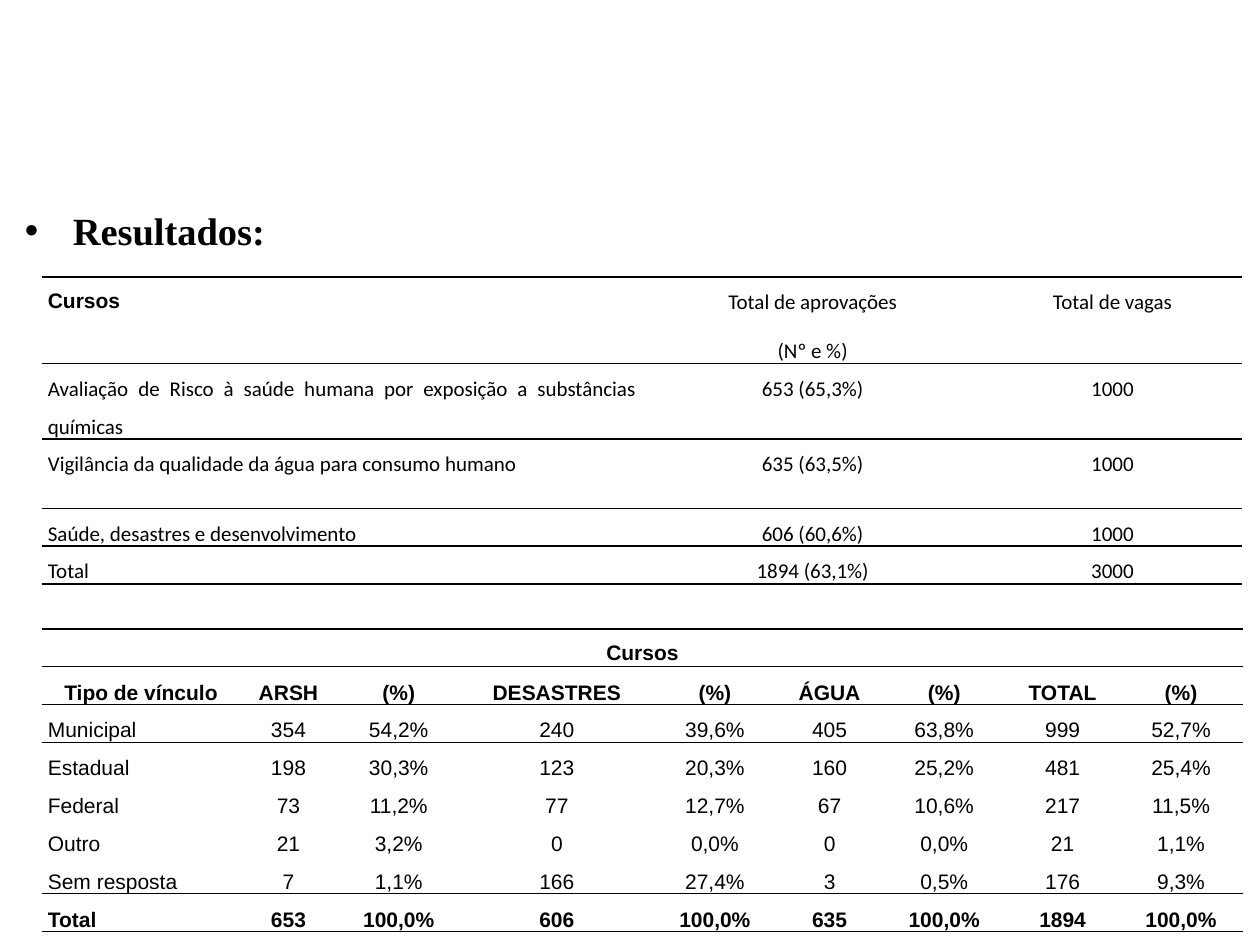
from dataclasses import dataclass

from lxml import etree
from pptx import Presentation
from pptx.dml.color import RGBColor
from pptx.enum.text import MSO_ANCHOR, PP_ALIGN
from pptx.oxml.ns import qn
from pptx.util import Inches, Pt

LEFT, CENTER, JUSTIFY = PP_ALIGN.LEFT, PP_ALIGN.CENTER, PP_ALIGN.JUSTIFY
TOP, MIDDLE, BOTTOM = MSO_ANCHOR.TOP, MSO_ANCHOR.MIDDLE, MSO_ANCHOR.BOTTOM
PLAIN_TABLE_STYLE = "{2D5ABB26-0587-4C30-8999-92F81FD0307C}"


@dataclass(frozen=True)
class Theme:
    ink: str = "000000"
    heading_font: str = "Times New Roman"
    table_font: str = "Arial"
    body_font: str = "Calibri"
    heading_size: int = 22
    table_size: int = 12
    rule_width: int = 1


class SlideBuilder:
    def __init__(self, slide, theme):
        self.slide = slide
        self.theme = theme

    def style(self, paragraph, font_name, size, bold):
        font = paragraph.font
        font.name, font.size, font.bold = font_name, Pt(size), bold
        font.color.rgb = RGBColor.from_string(self.theme.ink)

    def bullet_heading(self, text, left, top, width, height):
        box = self.slide.shapes.add_textbox(
            Inches(left), Inches(top), Inches(width), Inches(height))
        frame = box.text_frame
        frame.word_wrap = True
        frame.vertical_anchor = MIDDLE
        paragraph = frame.paragraphs[0]
        paragraph.text = text
        properties = paragraph._p.get_or_add_pPr()
        properties.set("marL", str(Inches(0.38)))
        properties.set("indent", str(Inches(-0.38)))
        etree.SubElement(properties, qn("a:buFont"), typeface="Arial")
        etree.SubElement(properties, qn("a:buChar"), char="•")
        self.style(paragraph, self.theme.heading_font, self.theme.heading_size, True)

    def table(self, left, top, widths, heights):
        frame = self.slide.shapes.add_table(
            len(heights), len(widths), Inches(left), Inches(top),
            Inches(sum(widths)), Inches(sum(heights)))
        table = frame.table
        table.first_row = table.horz_banding = False
        table._tbl.tblPr.find(qn("a:tableStyleId")).text = PLAIN_TABLE_STYLE
        for column, width in zip(table.columns, widths):
            column.width = Inches(width)
        for row, height in zip(table.rows, heights):
            row.height = Inches(height)
        return table

    def cell(self, cell, text, font_name, bold=False, align=CENTER, anchor=TOP):
        cell.margin_left = cell.margin_right = Inches(0.05)
        cell.margin_top = cell.margin_bottom = 0
        cell.vertical_anchor = anchor
        frame = cell.text_frame
        frame.text = text
        for index, paragraph in enumerate(frame.paragraphs):
            paragraph.alignment = align
            paragraph.line_spacing = 1.5
            if index:
                paragraph.space_before = Pt(6)
            self.style(paragraph, font_name, self.theme.table_size, bold)

    def rules(self, table, lines):
        """Draw horizontal rules; line n lies above row n."""
        for row_index, row in enumerate(table.rows):
            for cell in row.cells:
                properties = cell._tc.get_or_add_tcPr()
                for tag, line in (("a:lnT", row_index), ("a:lnB", row_index + 1)):
                    if line in lines:
                        border = etree.SubElement(
                            properties, qn(tag), w=str(Pt(self.theme.rule_width)))
                        fill = etree.SubElement(border, qn("a:solidFill"))
                        etree.SubElement(fill, qn("a:srgbClr"), val=self.theme.ink)
                cell.fill.background()


APPROVALS = [
    ("Cursos", "Total de aprovações\n(Nº e %)", "Total de vagas"),
    ("Avaliação de Risco à saúde humana por exposição a substâncias químicas",
     "653 (65,3%)", "1000"),
    ("Vigilância da qualidade da água para consumo humano", "635 (63,5%)", "1000"),
    ("Saúde, desastres e desenvolvimento", "606 (60,6%)", "1000"),
    ("Total", "1894 (63,1%)", "3000"),
]

EMPLOYMENT = [
    ("Tipo de vínculo", "ARSH", "(%)", "DESASTRES", "(%)", "ÁGUA", "(%)", "TOTAL", "(%)"),
    ("Municipal", "354", "54,2%", "240", "39,6%", "405", "63,8%", "999", "52,7%"),
    ("Estadual", "198", "30,3%", "123", "20,3%", "160", "25,2%", "481", "25,4%"),
    ("Federal", "73", "11,2%", "77", "12,7%", "67", "10,6%", "217", "11,5%"),
    ("Outro", "21", "3,2%", "0", "0,0%", "0", "0,0%", "21", "1,1%"),
    ("Sem resposta", "7", "1,1%", "166", "27,4%", "3", "0,5%", "176", "9,3%"),
    ("Total", "653", "100,0%", "606", "100,0%", "635", "100,0%", "1894", "100,0%"),
]


def add_approvals(builder):
    theme = builder.theme
    table = builder.table(0.33, 2.2, [4.77, 2.7, 2.06], [0.68, 0.6, 0.55, 0.3, 0.3])
    for row_index, values in enumerate(APPROVALS):
        for column, value in enumerate(values):
            corner = row_index == column == 0
            builder.cell(
                table.cell(row_index, column), value,
                theme.table_font if corner else theme.body_font, bold=corner,
                align=CENTER if column else JUSTIFY,
                anchor=TOP)
    builder.rules(table, {0, 1, 2, 4, 5})


def add_employment(builder):
    font_name = builder.theme.table_font
    widths = [1.58, 0.76, 0.99, 1.52, 0.99, 0.83, 0.99, 0.89, 0.99]
    table = builder.table(0.33, 4.99, widths, [0.3] * (len(EMPLOYMENT) + 1))
    title = table.cell(0, 0)
    title.merge(table.cell(0, len(widths) - 1))
    builder.cell(title, "Cursos", font_name, bold=True, anchor=MIDDLE)
    last = len(EMPLOYMENT)
    for row_index, values in enumerate(EMPLOYMENT, start=1):
        for column, value in enumerate(values):
            builder.cell(
                table.cell(row_index, column), value, font_name,
                bold=row_index in (1, last),
                align=CENTER if column or row_index == 1 else LEFT,
                anchor=BOTTOM)
    builder.rules(table, {0, 1, 2, last, last + 1})


def main():
    deck = Presentation()
    deck.slide_width, deck.slide_height = Inches(10), Inches(7.5)
    page = deck.slides.add_slide(deck.slide_layouts[6])
    builder = SlideBuilder(page, Theme())
    builder.bullet_heading("Resultados:", 0.1, 1.59, 10, 0.47)
    add_approvals(builder)
    add_employment(builder)
    deck.save("out.pptx")


if __name__ == "__main__":
    main()
